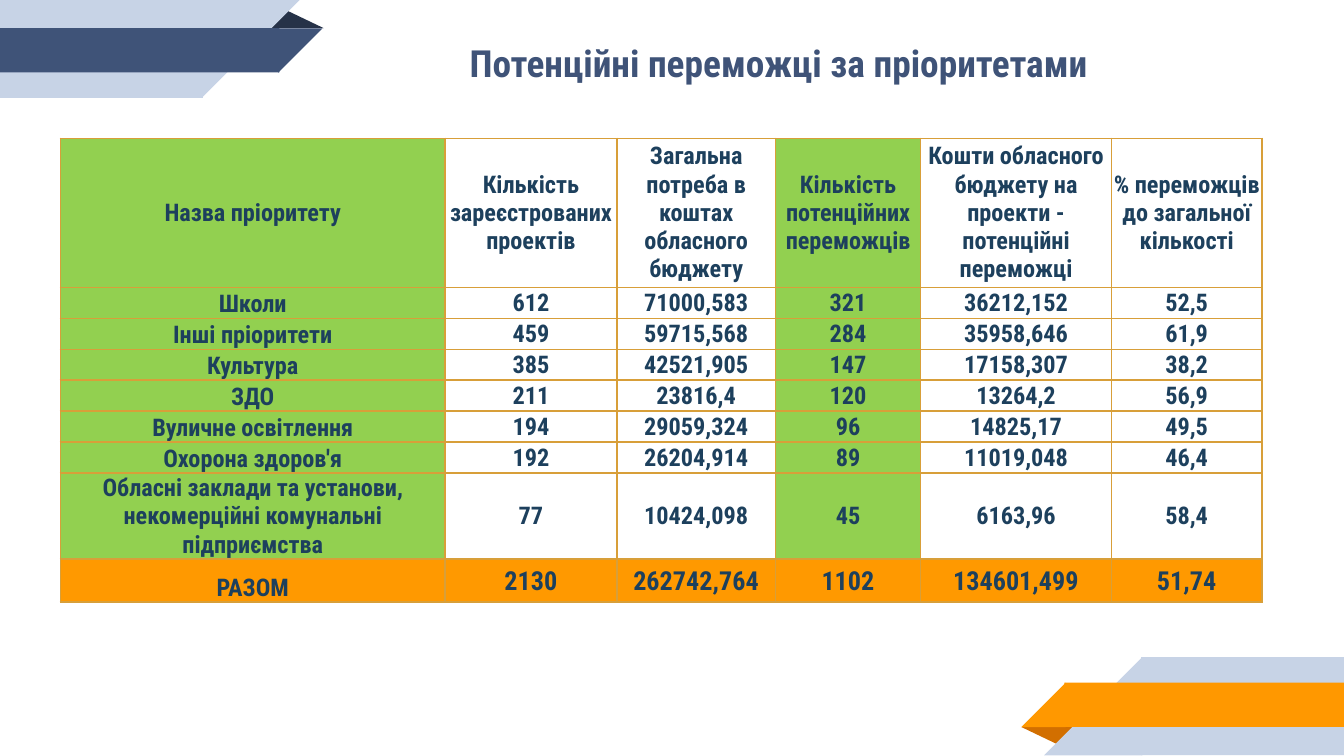
from lxml import etree
from pptx import Presentation
from pptx.dml.color import RGBColor
from pptx.enum import shapes, text
from pptx.oxml.ns import qn
from pptx.util import Inches, Pt

NAVY = RGBColor(0x3F, 0x53, 0x78)
DARK = RGBColor(0x26, 0x32, 0x48)
PALE = RGBColor(0xC7, 0xD3, 0xE6)
AMBER = RGBColor(0xFF, 0x98, 0x00)
RUST = RGBColor(0xD2, 0x6F, 0x00)
GREEN = RGBColor(0x92, 0xD0, 0x50)
GOLD = RGBColor(0xFF, 0x99, 0x00)
EDGE = RGBColor(0xD8, 0x9F, 0x39)
INK = RGBColor(0x1D, 0x40, 0x5D)
FACE = "Roboto Condensed"

# Widescreen page, 16 to 9
deck = Presentation()
deck.slide_width = Inches(10)
deck.slide_height = Inches(10) * 9 // 16
slide = deck.slides.add_slide(deck.slide_layouts[5])


def style(para, size, color):
    para.alignment = text.PP_ALIGN.CENTER
    look = {"name": FACE, "size": Pt(size), "bold": True}
    for key, val in look.items():
        setattr(para.font, key, val)
    para.font.color.rgb = color


def border(cell):
    props = cell._tc.get_or_add_tcPr()
    for i, side in enumerate(("lnL", "lnR", "lnT", "lnB")):
        line = etree.Element(qn("a:" + side), w=str(Pt(1)))
        fill = etree.SubElement(line, qn("a:solidFill"))
        etree.SubElement(fill, qn("a:srgbClr"), val=str(EDGE))
        props.insert(i, line)


# Corner ribbons: kind, left, top, width, height, rotation, mirrored, colour
KIND = shapes.MSO_SHAPE
RECT, WEDGE, FOLD = KIND.RECTANGLE, KIND.RIGHT_TRIANGLE, KIND.ISOSCELES_TRIANGLE
ribbons = [
    (FOLD, 7.6, 5.41, 0.43, 0.14, 180, False, RUST),
    (RECT, 8.49, 4.89, 1.51, 0.73, 0, False, PALE),
    (WEDGE, 7.77, 4.89, 0.73, 0.73, 0, True, PALE),
    (RECT, 7.92, 5.08, 2.08, 0.33, 0, False, AMBER),
    (WEDGE, 7.6, 5.08, 0.33, 0.33, 0, True, AMBER),
    (FOLD, 1.98, 0.07, 0.43, 0.14, 0, False, DARK),
    (RECT, 0, 0, 1.51, 0.73, 0, False, PALE),
    (WEDGE, 1.5, 0, 0.73, 0.73, 180, True, PALE),
    (RECT, 0, 0.21, 2.08, 0.33, 0, False, NAVY),
    (WEDGE, 2.07, 0.21, 0.33, 0.33, 180, True, NAVY),
]
for kind, *box, turn, mirror, color in ribbons:
    part = slide.shapes.add_shape(kind, *map(Inches, box))
    part.shadow.inherit = False
    part.fill.solid()
    part.fill.fore_color.rgb = color
    part.line.fill.background()
    part.rotation = turn
    if mirror:
        part._element.spPr.find(qn("a:xfrm")).set("flipH", "1")
    if kind == FOLD:
        part.adjustments[0] = 0.32

# Title
title = slide.shapes.title
place = {"left": 1.91, "top": 0.22, "width": 7.77, "height": 0.49}
for key, val in place.items():
    setattr(title, key, Inches(val))
frame = title.text_frame
frame.text = "Потенційні переможці за пріоритетами"
frame.auto_size = text.MSO_AUTO_SIZE.NONE
frame.vertical_anchor = text.MSO_ANCHOR.MIDDLE
for side in ("left", "right", "top", "bottom"):
    setattr(frame, "margin_" + side, Inches(0.1))
style(frame.paragraphs[0], 20, NAVY)

# Table of priorities
data = [
    ("Назва пріоритету", "Кількість зареєстрованих проектів",
     "Загальна потреба в коштах обласного бюджету",
     "Кількість потенційних переможців",
     "Кошти обласного бюджету на проекти - потенційні переможці",
     "% переможців до загальної кількості"),
    ("Школи", "612", "71000,583", "321", "36212,152", "52,5"),
    ("Інші пріоритети", "459", "59715,568", "284", "35958,646", "61,9"),
    ("Культура", "385", "42521,905", "147", "17158,307", "38,2"),
    ("ЗДО", "211", "23816,4", "120", "13264,2", "56,9"),
    ("Вуличне освітлення", "194", "29059,324", "96", "14825,17", "49,5"),
    ("Охорона здоров'я", "192", "26204,914", "89", "11019,048", "46,4"),
    ("Обласні заклади та установи,\vнекомерційні комунальні підприємства",
     "77", "10424,098", "45", "6163,96", "58,4"),
    ("РАЗОМ", "2130", "262742,764", "1102", "134601,499", "51,74"),
]
wide = [2.86, 1.28, 1.18, 1.08, 1.42, 1.12]
high = [1.11] + [0.23] * 6 + [0.64, 0.32]
last = len(data) - 1
grid = slide.shapes.add_table(len(data), len(wide), Inches(0.45), Inches(1.03),
                              Inches(sum(wide)), Inches(sum(high))).table
grid.first_row = grid.horz_banding = False
for col, size in zip(grid.columns, wide):
    col.width = Inches(size)
for row, size in zip(grid.rows, high):
    row.height = Inches(size)

for r, row in enumerate(data):
    for c, words in enumerate(row):
        cell = grid.cell(r, c)
        cell.text = words
        low = c == 0 and r > 0
        pad = Inches(0.01 if r else 0)
        look = {
            "margin_left": pad, "margin_right": pad,
            "margin_top": pad, "margin_bottom": 0,
            "vertical_anchor": text.MSO_ANCHOR.BOTTOM if low else text.MSO_ANCHOR.MIDDLE,
        }
        for key, val in look.items():
            setattr(cell, key, val)
        if r == last or c in (0, 3):
            cell.fill.solid()
            cell.fill.fore_color.rgb = GOLD if r == last else GREEN
        else:
            cell.fill.background()
        border(cell)
        style(cell.text_frame.paragraphs[0], 14 if r == last and c else 13, INK)

deck.save("out.pptx")
